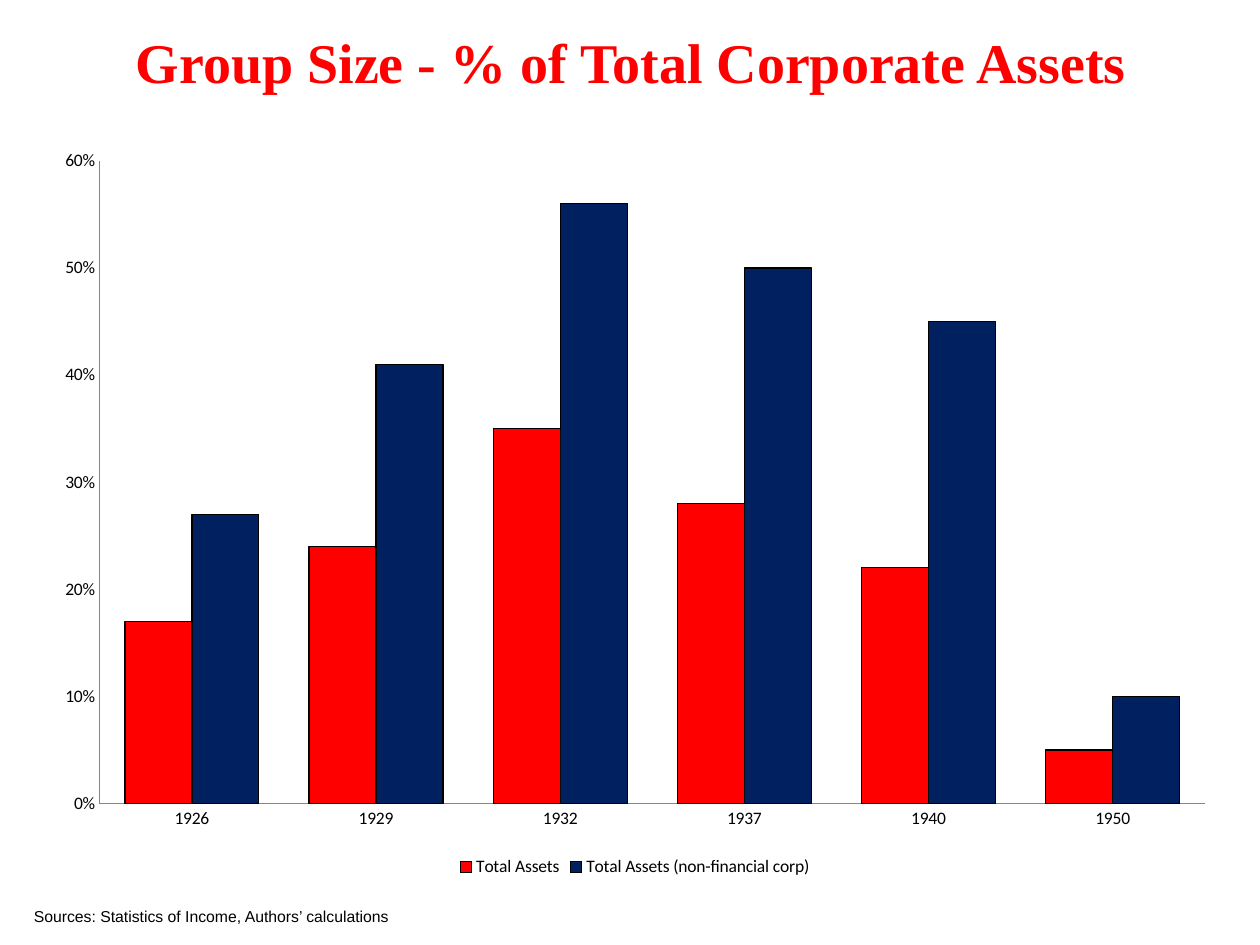
from pptx import Presentation
from pptx.chart.data import CategoryChartData
from pptx.dml.color import RGBColor
from pptx.enum import chart as ch, text as tx
from pptx.util import Inches, Pt

TITLE = "Group Size - % of Total Corporate Assets"
SOURCE = "Sources: Statistics of Income, Authors’ calculations"
YEARS = ["1926", "1929", "1932", "1937", "1940", "1950"]
SERIES = [
    ("Total Assets", "FF0000", [0.17, 0.24, 0.35, 0.28, 0.22, 0.05]),
    ("Total Assets (non-financial corp)", "002060",
     [0.27, 0.41, 0.56, 0.5, 0.45, 0.1]),
]


def color(code):
    return RGBColor.from_string(code)


def style(font, name, size, code, bold=False):
    font.name, font.size, font.bold = name, Pt(size), bold
    font.color.rgb = color(code)


def add_text(slide, words, box, align, wrap, *look):
    frame = slide.shapes.add_textbox(*map(Inches, box)).text_frame
    frame.word_wrap = wrap
    frame.vertical_anchor = tx.MSO_ANCHOR.MIDDLE
    para = frame.paragraphs[0]
    para.text, para.alignment = words, align
    style(para.font, *look)


def add_columns(slide, box):
    data = CategoryChartData(number_format="0%")
    data.categories = YEARS
    for name, _, values in SERIES:
        data.add_series(name, values)
    chart = slide.shapes.add_chart(
        ch.XL_CHART_TYPE.COLUMN_CLUSTERED, *map(Inches, box), data).chart
    style(chart.font, "Calibri", 10, "000000")
    chart.has_title = False
    chart.has_legend = True
    chart.legend.position = ch.XL_LEGEND_POSITION.BOTTOM
    chart.legend.include_in_layout = False

    plot = chart.plots[0]
    plot.gap_width, plot.overlap, plot.vary_by_categories = 75, 0, False
    for series, (_, fill, _) in zip(plot.series, SERIES):
        series.format.fill.solid()
        series.format.fill.fore_color.rgb = color(fill)
        series.format.line.color.rgb = color("000000")
        series.format.line.width = Pt(0.75)

    for axis in (chart.category_axis, chart.value_axis):
        axis.has_major_gridlines = False
        axis.major_tick_mark = axis.minor_tick_mark = ch.XL_TICK_MARK.NONE
        axis.format.line.color.rgb = color("868686")
        axis.format.line.width = Pt(0.75)
    values = chart.value_axis
    values.minimum_scale, values.maximum_scale, values.major_unit = 0, 0.6, 0.1
    values.tick_labels.number_format = "0%"
    values.tick_labels.number_format_is_linked = False


deck = Presentation()
deck.slide_width, deck.slide_height = Inches(10), Inches(7.5)
page = deck.slides.add_slide(deck.slide_layouts[6])
add_text(page, TITLE, (0.02, 0.13, 9.98, 0.71), tx.PP_ALIGN.CENTER, True,
         "Times New Roman", 32, "FF0000", True)
add_text(page, SOURCE, (0.17, 7.15, 3.67, 0.25), tx.PP_ALIGN.LEFT, True,
         "Arial", 9, "000000")
add_columns(page, (0.33, 1.08, 9.42, 5.92))
deck.save("out.pptx")
